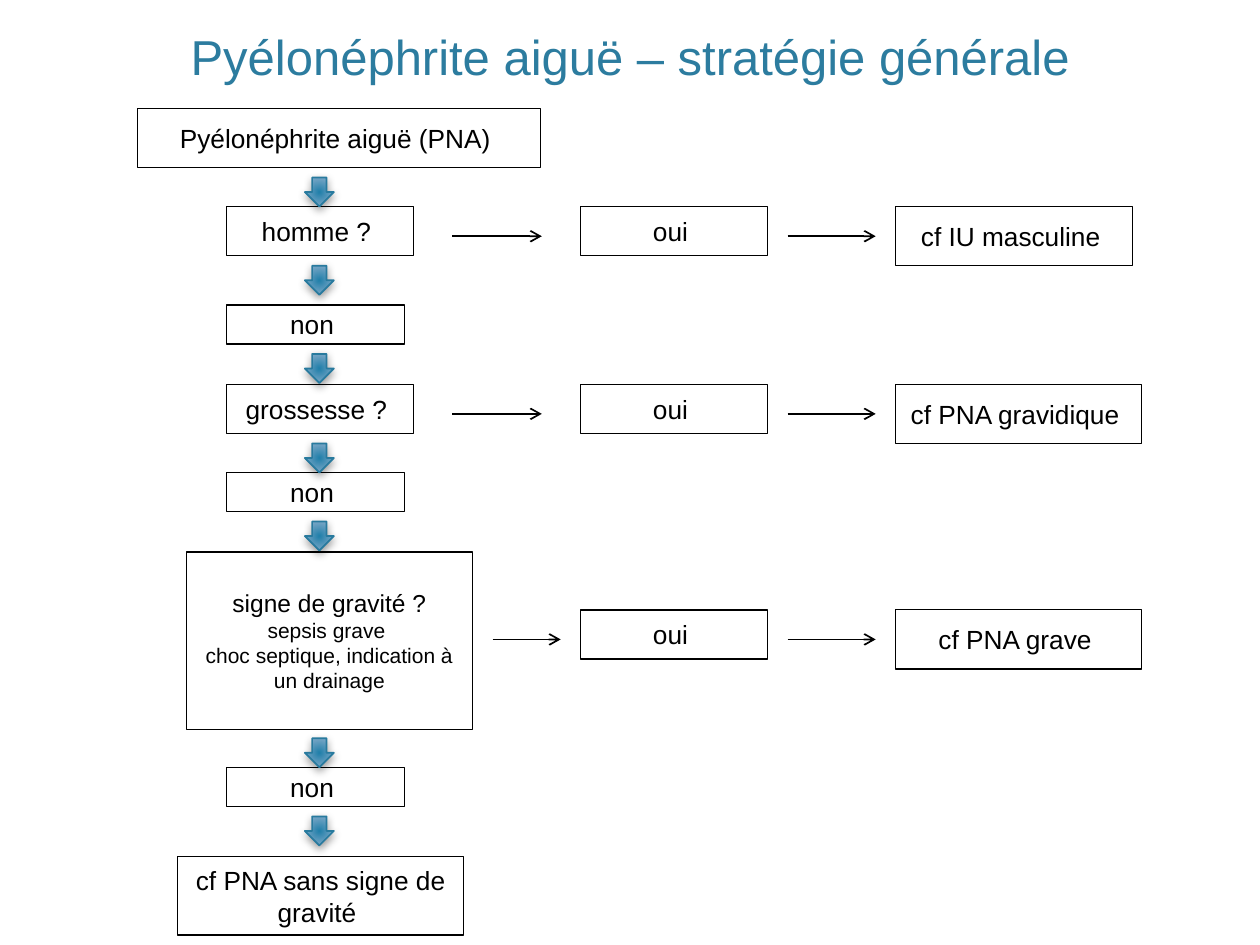
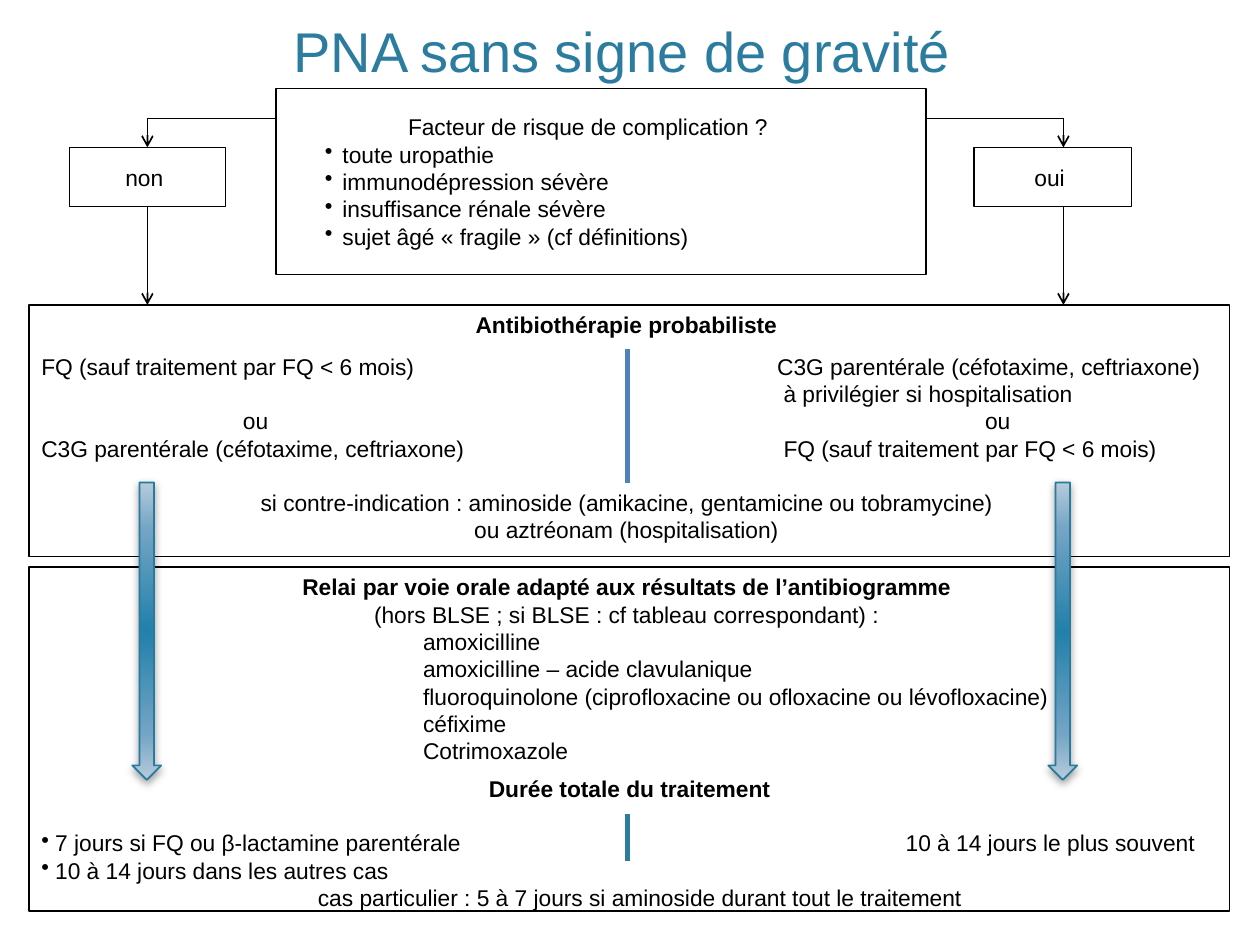
"""Build two slides on the management of acute pyelonephritis."""
from dataclasses import dataclass

from lxml import etree
from pptx import Presentation
from pptx import util as u
from pptx.dml.color import RGBColor
from pptx.enum import shapes, text
from pptx.oxml import parse_xml
from pptx.oxml.ns import nsdecls, qn

FONT = "Arial"
COLORS = {
    "ink": "000000",
    "title": "2C7C9F",
    "divider": "4F81BD",
    "arrow_line": "287A9E",
    "arrow_core": "2180AA",
    "arrow_middle": "75A5C5",
    "arrow_edge": "B8CCDC",
}
LINE_HEIGHT = 1.2
BLANK_LINE = 15.6
CENTER = text.PP_ALIGN.CENTER
LEFT = text.PP_ALIGN.LEFT
MIDDLE = text.MSO_ANCHOR.MIDDLE
TOP = text.MSO_ANCHOR.TOP


@dataclass
class Line:
    """One paragraph with its layout in inches and points."""
    words: str
    size: float = 13
    align: int = LEFT
    bold: bool = False
    before: float = 0
    left: float = 0
    hanging: float = 0
    tabs: tuple = ()
    color: str = "ink"


def rgb(name):
    """Return a named colour."""
    return RGBColor.from_string(COLORS[name])


def add_layout(paragraph, line):
    """Set the margin, bullet and tab stops of a paragraph."""
    properties = paragraph._p.get_or_add_pPr()
    properties.set("marL", str(u.Inches(line.left)))
    properties.set("indent", str(-u.Inches(line.hanging)))
    if line.hanging:
        etree.SubElement(properties, qn("a:buChar"), char="•")
    if line.tabs:
        stops = etree.SubElement(properties, qn("a:tabLst"))
        for position in line.tabs:
            etree.SubElement(stops, qn("a:tab"), pos=str(u.Inches(position)), algn="l")


def write(shape, lines, anchor):
    """Fill a shape with paragraphs."""
    frame = shape.text_frame
    frame.word_wrap = True
    frame.vertical_anchor = anchor
    for index, line in enumerate(lines):
        paragraph = frame.add_paragraph() if index else frame.paragraphs[0]
        add_layout(paragraph, line)
        paragraph.alignment = line.align
        paragraph.line_spacing = u.Pt(line.size * LINE_HEIGHT)
        if line.before:
            paragraph.space_before = u.Pt(line.before)
        run = paragraph.add_run()
        run.text = line.words
        run.font.name = FONT
        run.font.size = u.Pt(line.size)
        run.font.bold = line.bold
        run.font.color.rgb = rgb(line.color)


def add_text(slide, left, top, width, height, lines, anchor=TOP):
    """Add a text box."""
    shape = slide.shapes.add_textbox(*map(u.Inches, (left, top, width, height)))
    write(shape, lines, anchor)


def add_title(slide, words, size, top, height):
    """Add the slide title."""
    add_text(slide, 0.6, top, 8.8, height, [Line(words, size, CENTER, color="title")],
             text.MSO_ANCHOR.BOTTOM)


def add_box(slide, left, top, width, height, lines, anchor=MIDDLE):
    """Add an outlined box of text."""
    shape = slide.shapes.add_shape(
        shapes.MSO_SHAPE.RECTANGLE, *map(u.Inches, (left, top, width, height)))
    shape.shadow.inherit = False
    shape.fill.background()
    shape.line.color.rgb = rgb("ink")
    shape.line.width = u.Pt(0.75)
    write(shape, lines, anchor)
    return shape


def add_label(slide, left, top, width, height, words, size=15):
    """Add a box with one centred label."""
    return add_box(slide, left, top, width, height, [Line(words, size, CENTER)])


def add_block_arrow(slide, left, top, height=0.23):
    """Add a shaded down arrow."""
    shape = slide.shapes.add_shape(
        shapes.MSO_SHAPE.DOWN_ARROW, *map(u.Inches, (left, top, 0.23, height)))
    shape.line.color.rgb = rgb("arrow_line")
    shape.line.width = u.Pt(1)
    shape.fill.solid()
    properties = shape._element.spPr
    stops = "".join(
        f'<a:gs pos="{place}000"><a:srgbClr val="{COLORS[name]}"/></a:gs>'
        for place, name in ((0, "arrow_core"), (69, "arrow_middle"), (100, "arrow_edge")))
    gradient = parse_xml(
        f'<a:gradFill {nsdecls("a")} rotWithShape="1"><a:gsLst>{stops}</a:gsLst>'
        '<a:path path="circle"><a:fillToRect l="100000" t="100000" r="100000" b="100000"/>'
        '</a:path></a:gradFill>')
    properties.replace(properties.find(qn("a:solidFill")), gradient)
    shape.shadow.inherit = False
    properties.find(qn("a:effectLst")).append(parse_xml(
        f'<a:outerShdw {nsdecls("a")} blurRad="{u.Pt(5)}" dist="{u.Pt(2)}" dir="5400000" '
        f'rotWithShape="0"><a:srgbClr val="{COLORS["ink"]}"><a:alpha val="40000"/>'
        '</a:srgbClr></a:outerShdw>'))


def add_line(slide, start, end, color="ink", width=1, arrow=False):
    """Add a straight line, with an arrowhead at its end on request."""
    connector = slide.shapes.add_connector(
        shapes.MSO_CONNECTOR.STRAIGHT, *map(u.Inches, (*start, *end)))
    connector.line.color.rgb = rgb(color)
    connector.line.width = u.Pt(width)
    properties = connector._element.spPr
    if arrow:
        etree.SubElement(properties.find(qn("a:ln")), qn("a:tailEnd"), type="arrow")
    etree.SubElement(properties, qn("a:effectLst"))
    return connector


def build_strategy(slide):
    """Draw the general decision path."""
    add_title(slide, "Pyélonéphrite aiguë – stratégie générale", 28, 0.11, 0.62)
    add_label(slide, 1.09, 0.86, 3.2, 0.47, "Pyélonéphrite aiguë (PNA) ")
    add_label(slide, 1.8, 1.64, 1.48, 0.39, "homme ? ")
    add_label(slide, 1.8, 3.05, 1.48, 0.39, "grossesse ? ")
    add_box(slide, 1.48, 4.38, 2.27, 1.41, [
        Line("signe de gravité ?", 14, CENTER),
        Line("sepsis grave ", 12, CENTER),
        Line("choc septique, indication à un drainage", 12, CENTER),
    ])
    add_label(slide, 1.41, 6.8, 2.27, 0.62, "cf PNA sans signe de gravité ")
    for top in (2.42, 3.75, 6.09):
        add_label(slide, 1.8, top, 1.41, 0.31, "non ")
    for top in (1.41, 2.11, 2.81, 3.52, 4.14, 5.86, 6.48):
        add_block_arrow(slide, 2.42, top)
    outcomes = (
        (1.64, "cf IU masculine ", 1.88, 3.59, 4.3),
        (3.05, "cf PNA gravidique ", 1.95, 3.59, 4.3),
        (4.84, "cf PNA grave ", 1.95, 3.91, 4.45),
    )
    for top, outcome, width, start, end in outcomes:
        middle = top + 0.235
        add_line(slide, (start, middle), (end, middle), arrow=True)
        add_label(slide, 4.61, top, 1.48, 0.39, "oui ")
        add_line(slide, (6.25, middle), (6.95, middle), arrow=True)
        add_label(slide, 7.11, top, width, 0.47, outcome)


def build_risk_branches(slide):
    """Draw the risk factors and both answers."""
    factors = ("toute uropathie", "immunodépression sévère", "insuffisance rénale sévère",
               "sujet âgé « fragile » (cf définitions)")
    add_box(slide, 2.19, 0.7, 5.16, 1.48,
            [Line("Facteur de risque de complication ?", left=0.95)]
            + [Line(factor, left=0.43, hanging=0.14) for factor in factors])
    no_box = add_label(slide, 0.55, 1.17, 1.24, 0.47, "non ", 13)
    add_label(slide, 7.73, 1.17, 1.25, 0.47, "oui ", 13)
    for branch, side in ((1.17, 2.19), (8.44, 7.35)):
        add_line(slide, (side, 0.94), (branch, 0.94))
        into_answer = add_line(slide, (branch, 0.94), (branch, 1.17), arrow=True)
        from_answer = add_line(slide, (branch, 1.64), (branch, 2.42), arrow=True)
        if branch == 1.17:
            into_answer.end_connect(no_box, 0)
            from_answer.begin_connect(no_box, 2)


def build_treatment(slide):
    """Draw the treatment boxes."""
    quinolone = "FQ (sauf traitement par FQ < 6 mois)"
    cephalosporin = "C3G parentérale (céfotaxime, ceftriaxone)"
    add_box(slide, 0.23, 2.42, 9.53, 2, [
        Line("Antibiothérapie probabiliste ", align=CENTER, bold=True),
        Line("si contre-indication : aminoside (amikacine, gentamicine ou tobramycine) ",
             align=CENTER, before=BLANK_LINE * 5.5),
        Line("ou aztréonam (hospitalisation) ", align=CENTER),
    ], TOP)
    add_text(slide, 0.23, 2.75, 3.7, 0.97, [
        Line(quinolone),
        Line("ou", before=BLANK_LINE, left=1.6),
        Line(cephalosporin),
    ])
    add_text(slide, 6.07, 2.75, 3.65, 0.97, [
        Line(cephalosporin),
        Line("à privilégier si hospitalisation", left=0.05),
        Line("ou", left=1.65),
        Line(quinolone, left=0.05),
    ])
    drugs = ("amoxicilline", "amoxicilline – acide clavulanique",
             "fluoroquinolone (ciprofloxacine ou ofloxacine ou lévofloxacine)",
             "céfixime", "Cotrimoxazole")
    add_box(slide, 0.23, 4.5, 9.53, 2.73, [
        Line("Relai par voie orale adapté aux résultats de l’antibiogramme ",
             align=CENTER, bold=True),
        Line("(hors BLSE ; si BLSE : cf tableau correspondant) : ", align=CENTER),
        *[Line(drug, left=3.03) for drug in drugs],
        Line("Durée totale du traitement", align=CENTER, bold=True, before=6),
        Line("7 jours si FQ ou β-lactamine parentérale\t10 à 14 jours le plus souvent",
             before=BLANK_LINE, left=0.11, hanging=0.11, tabs=(6.86,)),
        Line("10 à 14 jours dans les autres cas", left=0.11, hanging=0.11),
        Line("cas particulier : 5 à 7 jours si aminoside durant tout le traitement",
             align=CENTER, left=0.16),
    ], TOP)
    add_line(slide, (4.98, 2.77), (4.98, 3.83), "divider", 3)
    add_line(slide, (4.98, 6.46), (4.98, 6.83), "title", 3)
    for left in (1.05, 8.32):
        add_block_arrow(slide, left, 3.83, 2.36)


def main():
    """Build and save the presentation."""
    presentation = Presentation()
    presentation.slide_width = u.Inches(10)
    presentation.slide_height = u.Inches(7.5)
    blank = presentation.slide_layouts[6]
    build_strategy(presentation.slides.add_slide(blank))
    slide = presentation.slides.add_slide(blank)
    add_title(slide, "PNA sans signe de gravité ", 32, 0.12, 0.59)
    build_risk_branches(slide)
    build_treatment(slide)
    presentation.save("out.pptx")


if __name__ == "__main__":
    main()
